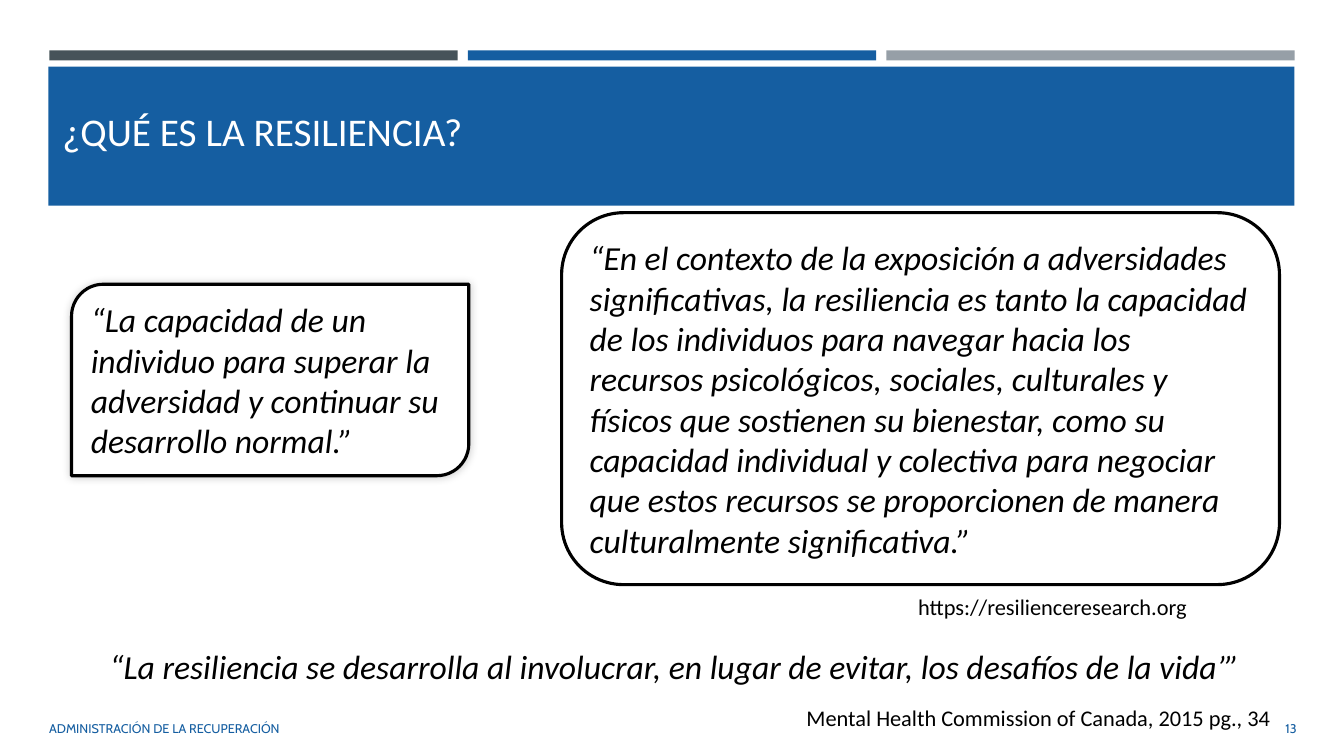
from lxml.etree import SubElement as Sub
from pptx import Presentation
from pptx.dml.color import RGBColor as RGB
from pptx.enum.shapes import MSO_SHAPE as Kind
from pptx.enum.text import MSO_ANCHOR as Anchor, PP_ALIGN as Align
from pptx.oxml.ns import qn
from pptx.util import Pt

BARS = ["slate", "blue", "gray"]
BAND = (48, 66, 1236, 138)

CARDS = [
    (Kind.FLOWCHART_ALTERNATE_PROCESS, (557, 211, 712, 369), False,
     "“En el contexto de la exposición a adversidades significativas, "
     "la resiliencia es tanto la capacidad de los individuos para navegar "
     "hacia los recursos psicológicos, sociales, culturales y físicos que "
     "sostienen su bienestar, como su capacidad individual y colectiva para "
     "negociar que estos recursos se proporcionen de manera culturalmente "
     "significativa.”"),
    (Kind.ROUND_2_DIAG_RECTANGLE, (71, 282, 394, 190), True,
     "“La capacidad de un individuo para superar la adversidad y continuar "
     "su desarrollo normal.”"),
]

TEXTS = [
    ("¿QUÉ ES LA RESILIENCIA?", (52, 95, 1206, 70), "title", Align.LEFT),
    ("“La resiliencia se desarrolla al involucrar, en lugar de evitar, "
     "los desafíos de la vida’”", (52, 636, 1234, 50), "quote", Align.CENTER),
    ("https://resilienceresearch.org", (850, 583, 337, 37), "cite", Align.RIGHT),
    ("Mental Health Commission of Canada, 2015 pg., 34",
     (97, 693, 1173, 37), "cite", Align.RIGHT),
    ("ADMINISTRACIÓN DE LA RECUPERACIÓN", (39, 703, 746, 40), "foot", Align.LEFT),
    ("13", (1181, 703, 115, 40), "foot", Align.RIGHT),
]

THEME = {
    "slate": "465359", "blue": "155EA1", "gray": "969FA7",
    "white": "FFFFFF", "black": "000000",
    "title": ("Calibri", 28, "white", False),
    "quote": ("Calibri", 24, "black", True),
    "cite": ("Calibri", 16, "black", False),
    "foot": ("Cabin", 9, "blue", False),
    "edge": 2.25,
}
PX = 9144


def tone(name):
    return RGB.from_string(THEME[name])


def place(box):
    return [n * PX for n in box]


def write(shape, text, style, align):
    face, size, color, slant = THEME[style]
    frame = shape.text_frame
    frame.text = text
    frame.word_wrap = True
    frame.vertical_anchor = Anchor.MIDDLE
    para = frame.paragraphs[0]
    para.alignment = align
    font = para.runs[0].font
    font.name, font.size, font.italic = face, Pt(size), slant
    font.color.rgb = tone(color)


def draw(slide, kind, box, fill):
    shape = slide.shapes.add_shape(kind, *place(box))
    shape.shadow.inherit = False
    shape.fill.solid()
    shape.fill.fore_color.rgb = tone(fill)
    shape.line.fill.background()
    return shape


def glow(shape):
    list_ = shape._element.spPr.find(qn("a:effectLst"))
    shade = Sub(list_, qn("a:outerShdw"), blurRad=str(Pt(6)), dist="0",
                dir="13500000", rotWithShape="0")
    color = Sub(shade, qn("a:srgbClr"), val=THEME["black"])
    Sub(color, qn("a:alpha"), val="20000")


def main():
    deck = Presentation()
    deck.slide_width, deck.slide_height = place((1333, 750))
    slide = deck.slides.add_slide(deck.slide_layouts[6])

    for i, fill in enumerate(BARS):
        draw(slide, Kind.RECTANGLE, (49 + 415 * i, 50, 405, 10), fill)
    draw(slide, Kind.RECTANGLE, BAND, "blue")

    for kind, box, shade, text in CARDS:
        card = draw(slide, kind, box, "white")
        card.line.color.rgb = tone("black")
        card.line.width = Pt(THEME["edge"])
        if shade:
            glow(card)
        write(card, text, "quote", Align.LEFT)

    for text, box, style, align in TEXTS:
        write(slide.shapes.add_textbox(*place(box)), text, style, align)

    deck.save("out.pptx")


if __name__ == "__main__":
    main()
